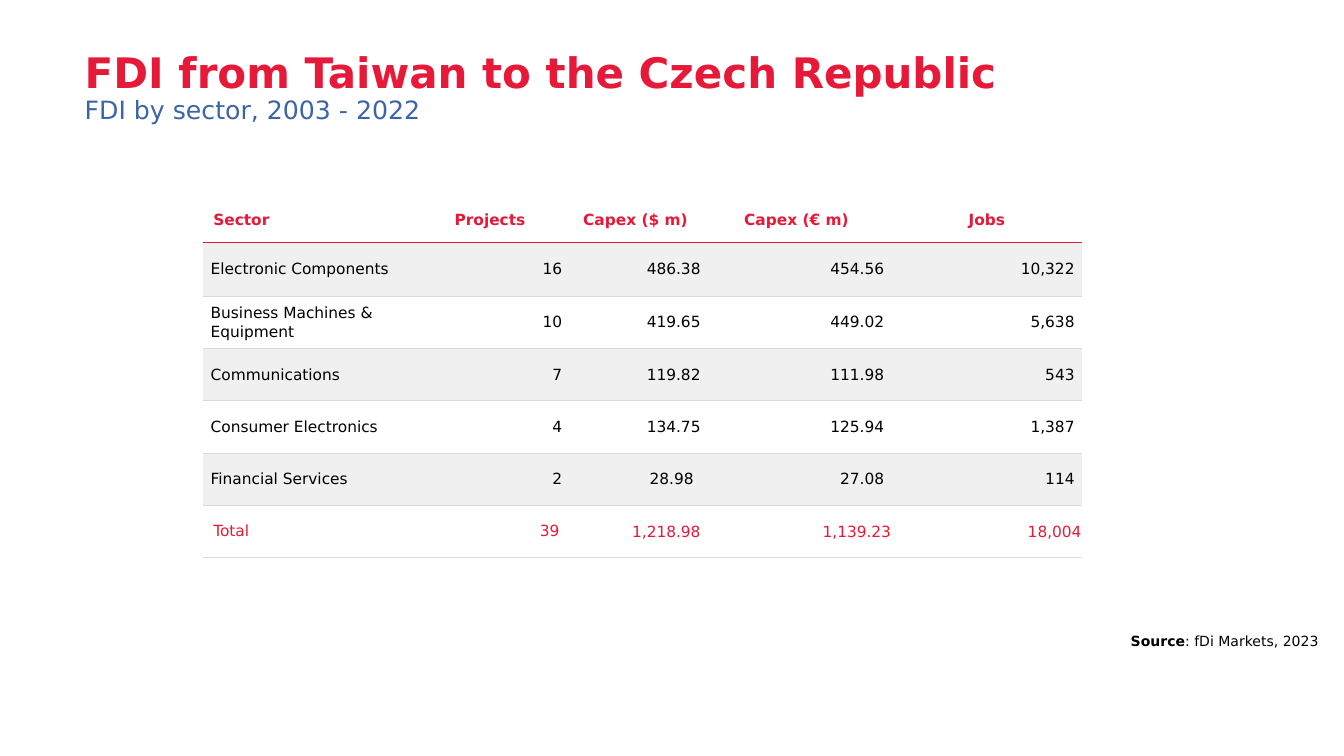
from dataclasses import dataclass

from lxml import etree
from pptx import Presentation
from pptx.dml.color import RGBColor
from pptx.enum.text import MSO_ANCHOR, MSO_AUTO_SIZE, PP_ALIGN
from pptx.oxml.ns import qn
from pptx.util import Cm, Pt

LEFT, MID, RIGHT = PP_ALIGN.LEFT, PP_ALIGN.CENTER, PP_ALIGN.RIGHT
MIDDLE = MSO_ANCHOR.MIDDLE
GROW = MSO_AUTO_SIZE.SHAPE_TO_FIT_TEXT
RED = RGBColor(0xE6, 0x1A, 0x38)
BLUE = RGBColor(0x3C, 0x65, 0xA6)
BLACK = RGBColor(0, 0, 0)
WHITE = RGBColor(0xFF, 0xFF, 0xFF)
PALE = RGBColor(0xF0, 0xF0, 0xF0)
GREY = RGBColor(0xDA, 0xDA, 0xDA)
FONT = "DejaVu Sans"


@dataclass(frozen=True)
class Pad:
    side: float
    top: float
    base: float
    lead: float = 1.0


@dataclass(frozen=True)
class Rule:
    color: RGBColor
    width: float


@dataclass(frozen=True)
class Row:
    texts: tuple[str, ...]
    pads: tuple[Pad, ...]
    high: float = 2.64
    color: RGBColor = BLACK
    fill: RGBColor = WHITE
    head: bool = False


@dataclass(frozen=True)
class Span:
    text: str
    size: float
    color: RGBColor
    bold: bool


WIDE = Pad(0.51, 0.25, 0.25)
BODY = Pad(0.38, 0, 0, 1.05)
TIGHT = Pad(0.03, 0.03, 0)
THICK, THIN = Rule(RED, 2), Rule(GREY, 1)
MIXED = (BODY, BODY, TIGHT, BODY, BODY)
COLS = (10.44, 8.03, 6.63, 9.6, 9.6)
ROWS = (
    Row(("Sector", "Projects", "Capex ($ m)", "Capex (€ m)", "Jobs"),
        (WIDE,) * 5, 2.26, RED, head=True),
    Row(("Electronic Components", "16", "486.38", "454.56", "10,322"),
        MIXED, 2.69, fill=PALE),
    Row(("Business Machines & Equipment", "10", "419.65", "449.02", "5,638"), MIXED),
    Row(("Communications", "7", "119.82", "111.98", "543"), MIXED, fill=PALE),
    Row(("Consumer Electronics", "4", "134.75", "125.94", "1,387"), MIXED),
    Row(("Financial Services", "2", "28.98", "27.08", "114"), (BODY,) * 5, fill=PALE),
    Row(("Total", "39", "1,218.98", "1,139.23", "18,004"),
        (WIDE, WIDE, TIGHT, TIGHT, TIGHT), color=RED),
)


def edge(cell, rules: dict[str, Rule | None]) -> None:
    """Draw the given sides of a cell and blank those without a rule."""
    props = cell._tc.get_or_add_tcPr()
    for spot, (side, rule) in enumerate(rules.items()):
        line = etree.Element(qn(f"a:ln{side}"))
        if rule:
            line.set("w", str(Pt(rule.width)))
            fill = etree.SubElement(line, qn("a:solidFill"))
            etree.SubElement(fill, qn("a:srgbClr"), val=str(rule.color))
        else:
            etree.SubElement(line, qn("a:noFill"))
        props.insert(spot, line)


def write(cell, text: str, pad: Pad, row: Row, align: PP_ALIGN) -> None:
    """Fill one cell with its text, padding and colours."""
    cell.margin_left = cell.margin_right = Cm(pad.side)
    cell.margin_top, cell.margin_bottom = Cm(pad.top), Cm(pad.base)
    cell.vertical_anchor = MIDDLE
    cell.fill.solid()
    cell.fill.fore_color.rgb = row.fill
    cell.text = text
    para = cell.text_frame.paragraphs[0]
    para.alignment, para.line_spacing = align, pad.lead
    font = para.font
    font.name, font.size, font.bold = FONT, Pt(22), row.head
    font.color.rgb = row.color


def grid(slide) -> None:
    """Build the sector table."""
    high = sum(row.high for row in ROWS)
    frame = slide.shapes.add_table(len(ROWS), len(COLS), Cm(10.24), Cm(9.96),
                                   Cm(sum(COLS)), Cm(high))
    table = frame.table
    table.horz_banding = table.first_row = False
    for col, wide in zip(table.columns, COLS):
        col.width = Cm(wide)
    above = None
    for line, row in zip(table.rows, ROWS):
        line.height = Cm(row.high)
        below = THICK if row.head else THIN
        for spot, (cell, text, pad) in enumerate(zip(line.cells, row.texts, row.pads)):
            align = LEFT if spot == 0 else MID if row.head else RIGHT
            write(cell, text, pad, row, align)
            edge(cell, {"L": None, "R": None, "T": above, "B": below})
        above = below


def put(para, span: Span) -> None:
    """Add one styled run to a paragraph."""
    run = para.add_run()
    run.text = span.text
    font = run.font
    font.name, font.size, font.bold = FONT, Pt(span.size), span.bold
    font.color.rgb = span.color


def title(slide) -> None:
    """Add the title with its second line."""
    frame = slide.shapes.add_textbox(Cm(4.27), Cm(2.64), Cm(59.2), Cm(4.9)).text_frame
    frame.word_wrap = True
    frame.margin_left = frame.margin_right = frame.margin_top = frame.margin_bottom = 0
    para = frame.paragraphs[0]
    para.line_spacing = 0.9
    put(para, Span("FDI from Taiwan to the Czech Republic", 60, RED, True))
    para.add_line_break()
    put(para, Span("FDI by sector, 2003 - 2022", 36, BLUE, False))


def source(slide) -> None:
    """Add the source note."""
    frame = slide.shapes.add_textbox(Cm(56.74), Cm(31.75), Cm(10.24), Cm(1.12)).text_frame
    frame.word_wrap = False
    frame.auto_size = GROW
    para = frame.paragraphs[0]
    put(para, Span("Source", 20, BLACK, True))
    put(para, Span(": fDi Markets, 2023", 20, BLACK, False))


def main() -> None:
    """Build and save the slide."""
    deck = Presentation()
    deck.slide_width, deck.slide_height = Cm(67.74), Cm(38.1)
    slide = deck.slides.add_slide(deck.slide_layouts[6])
    grid(slide)
    title(slide)
    source(slide)
    deck.save("out.pptx")


if __name__ == "__main__":
    main()
